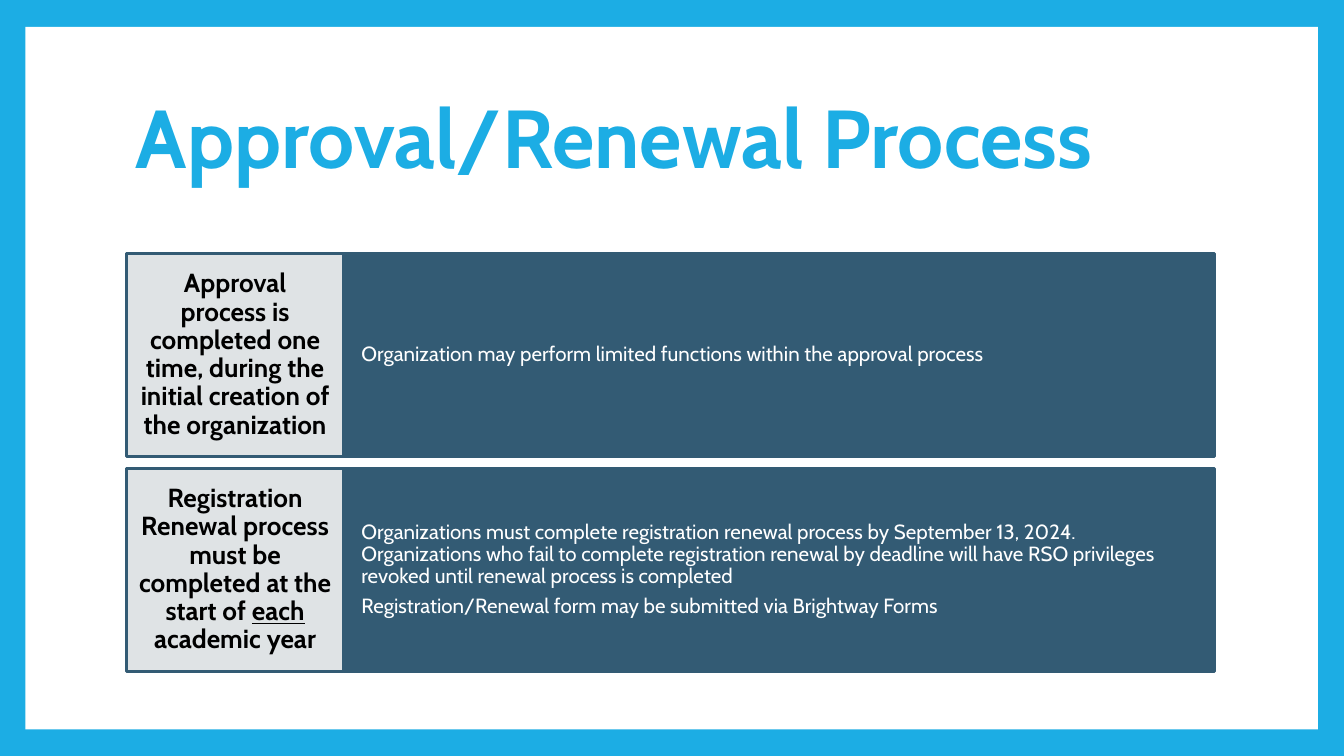
from pptx import Presentation
from pptx.dml.color import RGBColor
from pptx.enum.shapes import MSO_SHAPE
from pptx.enum.text import MSO_ANCHOR, MSO_AUTO_SIZE, PP_ALIGN
from pptx.util import Cm, Pt

RECTANGLE = MSO_SHAPE.RECTANGLE
MIDDLE = MSO_ANCHOR.MIDDLE
NO_AUTOFIT = MSO_AUTO_SIZE.NONE
LEFT, CENTER = PP_ALIGN.LEFT, PP_ALIGN.CENTER

SKY = RGBColor(0x1C, 0xAD, 0xE4)
SLATE = RGBColor(0x33, 0x5B, 0x74)
MIST = RGBColor(0xDF, 0xE3, 0xE5)
WHITE = RGBColor(0xFF, 0xFF, 0xFF)
BLACK = RGBColor(0x00, 0x00, 0x00)

FONT = "Cabin"
TITLE_ONLY = 5
MARGIN = 2.39
CONTENT_WIDTH = 20.57
LABEL_WIDTH = 4.11
ROWS_TOP = 4.79
ROW_HEIGHT = 3.84
ROW_PITCH = 4.06

ROWS = [
    (
        ["Approval process is completed one time, during the initial "
         "creation of the organization"],
        ["Organization may perform limited functions within the approval process"],
    ),
    (
        ["Registration Renewal process must be completed at the start of ",
         "each", " academic year"],
        ["Organizations must complete registration renewal process by "
         "September 13, 2024. Organizations who fail to complete registration "
         "renewal by deadline will have RSO privileges revoked until renewal "
         "process is completed",
         "Registration/Renewal form may be submitted via Brightway Forms"],
    ),
]


def write_text(box, paragraphs, size, color, bold=False, align=LEFT,
               inset=(0.18, 0.1), space_after=0, underlined=()):
    frame = box.text_frame
    frame.word_wrap = True
    frame.auto_size = NO_AUTOFIT
    frame.vertical_anchor = MIDDLE
    frame.margin_left = frame.margin_right = Cm(inset[0])
    frame.margin_top = frame.margin_bottom = Cm(inset[1])
    for index, spans in enumerate(paragraphs):
        para = frame.add_paragraph() if index else frame.paragraphs[0]
        para.alignment = align
        para.line_spacing = 0.9
        para.space_before = Pt(0)
        para.space_after = Pt(space_after)
        for text in spans:
            span = para.add_run()
            span.text = text
            span.font.name = FONT
            span.font.size = Pt(size)
            span.font.bold = bold
            span.font.underline = text in underlined
            span.font.color.rgb = color


def add_box(page, left, top, width, height, fill, line=None):
    box = page.shapes.add_shape(RECTANGLE, Cm(left), Cm(top), Cm(width), Cm(height))
    box.shadow.inherit = False
    box.fill.solid()
    box.fill.fore_color.rgb = fill
    if line is None:
        box.line.fill.background()
    else:
        box.line.color.rgb = line
        box.line.width = Pt(1.5)
    return box


def add_title(page, text):
    title = page.shapes.title
    title.left, title.top = Cm(MARGIN), Cm(1.27)
    title.width, title.height = Cm(CONTENT_WIDTH), Cm(2.82)
    write_text(title, [[text]], size=44, color=SKY, bold=True)
    page.shapes._spTree.append(title._element)


def add_row(page, top, label, details):
    detail_box = add_box(page, MARGIN + LABEL_WIDTH, top,
                         CONTENT_WIDTH - LABEL_WIDTH, ROW_HEIGHT, SLATE, SLATE)
    write_text(detail_box, [[detail] for detail in details], size=11, color=WHITE,
               inset=(0.33, 0.97), space_after=3.85)
    label_box = add_box(page, MARGIN, top, LABEL_WIDTH, ROW_HEIGHT, MIST, SLATE)
    write_text(label_box, [label], size=14, color=BLACK, bold=True, align=CENTER,
               inset=(0.23, 0.38), space_after=4.9, underlined=("each",))


def main():
    deck = Presentation()
    deck.slide_width, deck.slide_height = Cm(25.4), Cm(14.29)
    page = deck.slides.add_slide(deck.slide_layouts[TITLE_ONLY])
    page.background.fill.solid()
    page.background.fill.fore_color.rgb = SKY
    add_box(page, 0.48, 0.51, 24.43, 13.28, WHITE)
    add_title(page, "Approval/Renewal Process")
    for index, (label, details) in enumerate(ROWS):
        add_row(page, ROWS_TOP + index * ROW_PITCH, label, details)
    deck.save("out.pptx")


if __name__ == "__main__":
    main()
